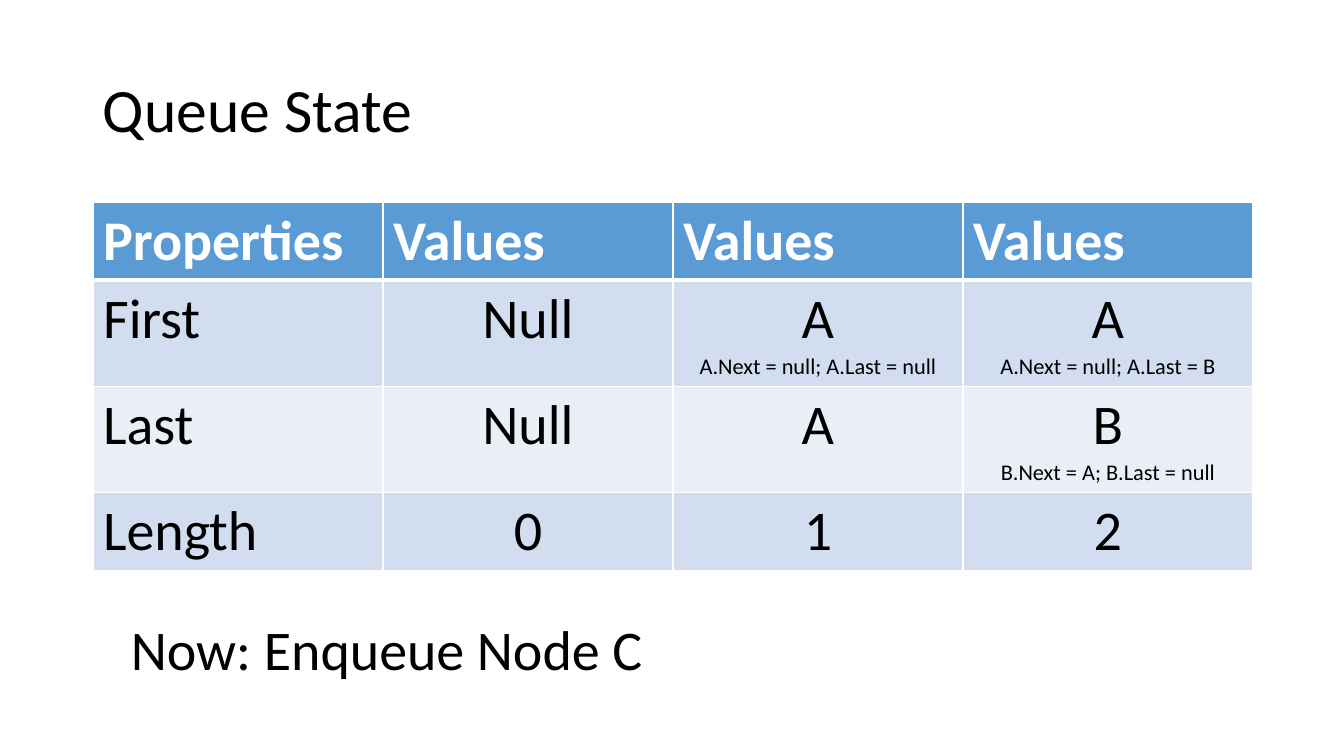
import pptx
import pptx.util
import pptx.dml.color
import pptx.enum.text
import pptx.oxml
import pptx.oxml.ns
import lxml.etree
from dataclasses import dataclass

ALIGN = pptx.enum.text.PP_ALIGN
ANCHOR = pptx.enum.text.MSO_ANCHOR
AUTO_SIZE = pptx.enum.text.MSO_AUTO_SIZE


@dataclass(frozen=True)
class Theme:
    font: str = "Calibri"
    title: int = 44
    body: int = 40
    detail: int = 16
    ink: str = "000000"
    white: str = "FFFFFF"
    header: str = "5B9BD5"
    bands: tuple = ("D2DEEF", "EAEFF7")
    rule: int = 1
    header_rule: int = 3


THEME = Theme()

HEADINGS = ["Properties", "Values", "Values", "Values"]
# A line break separates a value from its small detail line
STATES = [
    ["First", "Null", "A\nA.Next = null; A.Last = null", "A\nA.Next = null; A.Last = B"],
    ["Last", "Null", "A", "B\nB.Next = A; B.Last = null"],
    ["Length", "0", "1", "2"],
]
ROW_HEIGHTS = [78, 106, 106, 78]
COLUMN_WIDTH = 290


def px(n):
    """Turn pixels at 100.8 to the inch into EMU."""
    return pptx.util.Emu(round(n * 914400 / 100.8))


def rgb(color):
    return pptx.dml.color.RGBColor.from_string(color)


def write(p, text, size=THEME.body, color=THEME.ink, bold=False,
          align=ALIGN.LEFT, spacing=None):
    p.alignment = align
    if spacing:
        p.line_spacing = spacing
    r = p.add_run()
    r.text = text
    r.font.name = THEME.font
    r.font.size = pptx.util.Pt(size)
    r.font.bold = bold
    r.font.color.rgb = rgb(color)


def add_text(s, box, text, wrap=True, anchor=ANCHOR.TOP,
             auto_size=AUTO_SIZE.NONE, **style):
    sp = s.shapes.add_textbox(*map(px, box))
    tf = sp.text_frame
    tf.word_wrap = wrap
    tf.vertical_anchor = anchor
    tf.auto_size = auto_size
    write(tf.paragraphs[0], text, **style)


def set_borders(cell, **widths):
    """Draw the cell borders, with widths in points for L, R, T and B."""
    tc_pr = cell._tc.get_or_add_tcPr()
    for side in "LRTB":
        width = pptx.util.Pt(widths.get(side, THEME.rule))
        ln = pptx.oxml.parse_xml(
            f'<a:ln{side} {pptx.oxml.ns.nsdecls("a")} w="{width}"><a:solidFill>'
            f'<a:srgbClr val="{THEME.white}"/></a:solidFill></a:ln{side}>')
        tc_pr.append(ln)


def fill_cell(cell, text, fill, borders, **style):
    set_borders(cell, **borders)
    cell.fill.solid()
    cell.fill.fore_color.rgb = rgb(fill)
    value, *details = text.split("\n")
    tf = cell.text_frame
    write(tf.paragraphs[0], value, **style)
    for detail in details:
        write(tf.add_paragraph(), detail, **{**style, "size": THEME.detail})


def add_state_table(s, left, top):
    rows = [HEADINGS, *STATES]
    table = s.shapes.add_table(
        len(rows), len(HEADINGS), px(left), px(top),
        px(COLUMN_WIDTH * len(HEADINGS)), px(sum(ROW_HEIGHTS))).table
    for column in table.columns:
        column.width = px(COLUMN_WIDTH)
    for i, (row, height) in enumerate(zip(rows, ROW_HEIGHTS)):
        table.rows[i].height = px(height)
        for j, text in enumerate(row):
            cell = table.cell(i, j)
            if i == 0:
                fill_cell(cell, text, THEME.header, {"B": THEME.header_rule},
                          color=THEME.white, bold=True)
            else:
                borders = {"T": THEME.header_rule} if i == 1 else {}
                fill_cell(cell, text, THEME.bands[(i - 1) % 2], borders,
                          align=ALIGN.CENTER if j else ALIGN.LEFT)


def main():
    prs = pptx.Presentation()
    prs.slide_width, prs.slide_height = px(1344), px(756)
    s = prs.slides.add_slide(prs.slide_layouts[6])

    # Title
    add_text(s, (93, 40, 1159, 146), "Queue State", anchor=ANCHOR.MIDDLE,
             size=THEME.title, spacing=0.9)

    # Queue properties after each step
    add_state_table(s, 93, 202)

    # Next step
    add_text(s, (121, 610, 537, 78), "Now: Enqueue Node C", wrap=False,
             auto_size=AUTO_SIZE.SHAPE_TO_FIT_TEXT)

    prs.save("out.pptx")


if __name__ == "__main__":
    main()
